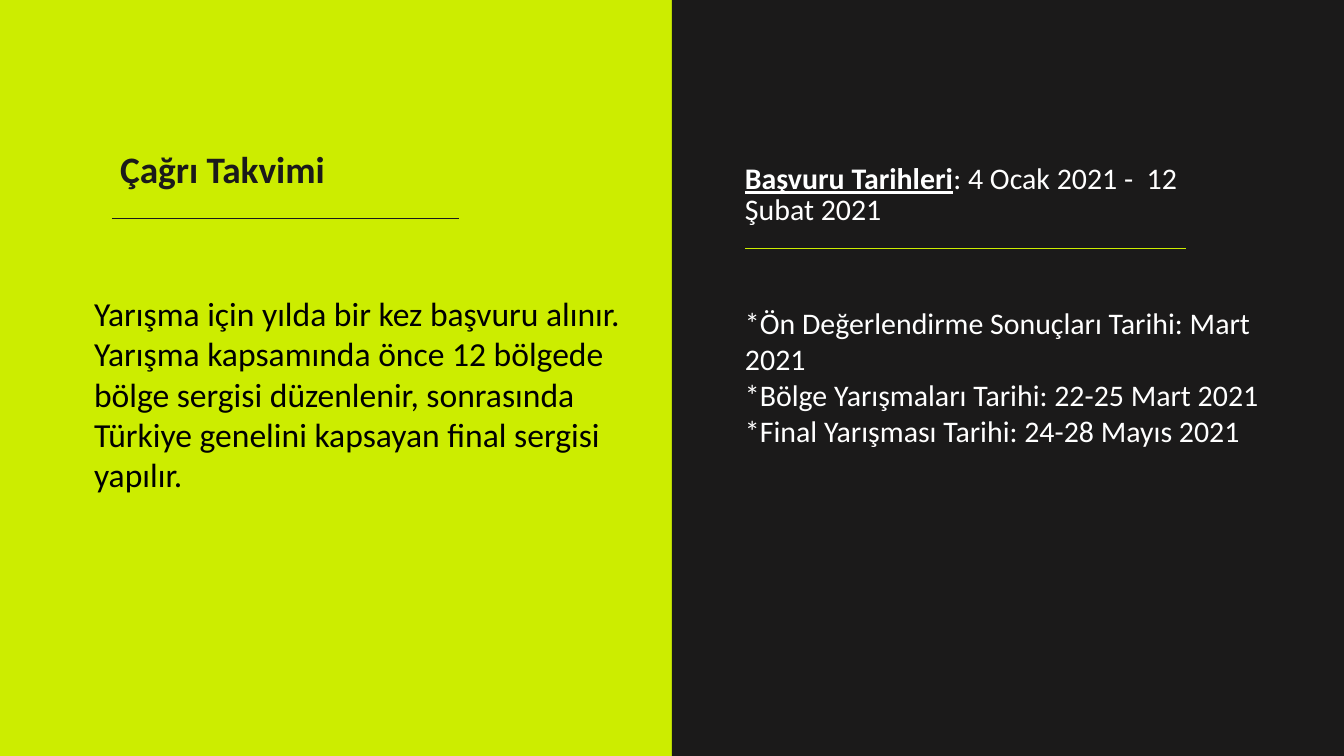
"""Build the competition calendar slide."""
from lxml import etree
from pptx import Presentation
from pptx.dml.color import RGBColor
from pptx.enum.shapes import MSO_CONNECTOR, MSO_SHAPE
from pptx.enum.text import MSO_ANCHOR, MSO_AUTO_SIZE, PP_ALIGN
from pptx.oxml.ns import qn
from pptx.util import Emu, Pt

RECTANGLE, STRAIGHT = MSO_SHAPE.RECTANGLE, MSO_CONNECTOR.STRAIGHT
TOP, LEFT, NO_AUTOFIT = MSO_ANCHOR.TOP, PP_ALIGN.LEFT, MSO_AUTO_SIZE.NONE

TITLE = "Çağrı Takvimi"
DESCRIPTION = (
    "Yarışma için yılda bir kez başvuru alınır. Yarışma kapsamında önce 12 "
    "bölgede bölge sergisi düzenlenir, sonrasında Türkiye genelini kapsayan "
    "final sergisi yapılır."
)
APPLICATION_LABEL = "Başvuru Tarihleri"
APPLICATION_DATES = ": 4 Ocak 2021 -  12 Şubat 2021"
KEY_DATES = [
    "*Ön Değerlendirme Sonuçları Tarihi: Mart 2021",
    "*Bölge Yarışmaları Tarihi: 22-25 Mart 2021",
    "*Final Yarışması Tarihi: 24-28 Mayıs 2021",
]

THEME = {
    "font": "Calibri",
    "lime": RGBColor(0xCC, 0xED, 0x00),
    "dark": RGBColor(0x1B, 0x1A, 0x1A),
    "white": RGBColor(0xFF, 0xFF, 0xFF),
    "black": RGBColor(0, 0, 0),
    "title": Pt(40),
    "description": Pt(36),
    "dates": Pt(32),
    "leading": Pt(33),
    "rule": Pt(0.75),
}
WIDTH, HEIGHT = 1344, 756
MIDDLE = WIDTH // 2
DATES_LEFT = 745
RULES = [(112, 218, 347, "dark"), (DATES_LEFT, 248, 441, "lime")]


def px(length):
    return Emu(round(length * 914400 / 67.2))


def place(shape, left, top, width, height):
    shape.left, shape.top = px(left), px(top)
    shape.width, shape.height = px(width), px(height)


def style(shape, size, color, leading=None, bold=False):
    frame = shape.text_frame
    frame.word_wrap = True
    frame.auto_size = NO_AUTOFIT
    frame.vertical_anchor = TOP
    frame.margin_left = frame.margin_right = 0
    frame.margin_top = frame.margin_bottom = 0
    for paragraph in frame.paragraphs:
        paragraph.alignment = LEFT
        paragraph.space_before = paragraph.space_after = Pt(0)
        paragraph.line_spacing = leading
        properties = paragraph._p.get_or_add_pPr()
        properties.set("marL", "0")
        properties.set("indent", "0")
        etree.SubElement(properties, qn("a:buNone"))
        for run in paragraph.runs:
            run.font.name = THEME["font"]
            run.font.size = THEME[size]
            run.font.color.rgb = THEME[color]
            run.font.bold = bold


def add_panel(slide):
    panel = slide.shapes.add_shape(RECTANGLE, px(MIDDLE), 0, px(MIDDLE), px(HEIGHT))
    panel.shadow.inherit = False
    panel.fill.solid()
    panel.fill.fore_color.rgb = THEME["dark"]
    panel.line.fill.background()
    panel.element.getparent().insert(2, panel.element)


def add_rule(slide, left, top, width, color):
    rule = slide.shapes.add_connector(STRAIGHT, px(left), px(top), px(left + width), px(top))
    rule.line.color.rgb = THEME[color]
    rule.line.width = THEME["rule"]
    etree.SubElement(rule.element.spPr, qn("a:effectLst"))


def add_application_dates(slide):
    application = slide.shapes.add_textbox(px(DATES_LEFT), px(165), px(441), px(70))
    paragraph = application.text_frame.paragraphs[0]
    for text in (APPLICATION_LABEL, APPLICATION_DATES):
        paragraph.add_run().text = text
    style(application, "dates", "white", THEME["leading"])
    label = paragraph.runs[0].font
    label.bold = label.underline = True


def main():
    presentation = Presentation()
    presentation.slide_width, presentation.slide_height = px(WIDTH), px(HEIGHT)
    slide = presentation.slides.add_slide(presentation.slide_layouts[3])
    slide.background.fill.solid()
    slide.background.fill.fore_color.rgb = THEME["lime"]
    add_panel(slide)

    title, description, key_dates = slide.placeholders
    title.text_frame.text = TITLE
    place(title, 120, 160, 339, 34)
    style(title, "title", "dark", THEME["leading"], bold=True)

    description.text_frame.text = DESCRIPTION
    place(description, 94, 293, 541, 204)
    style(description, "description", "black")

    key_dates.text_frame.text = "\n".join(KEY_DATES)
    place(key_dates, DATES_LEFT, 305, 564, 206)
    style(key_dates, "dates", "white")

    add_application_dates(slide)
    for rule in RULES:
        add_rule(slide, *rule)
    presentation.save("out.pptx")


if __name__ == "__main__":
    main()
